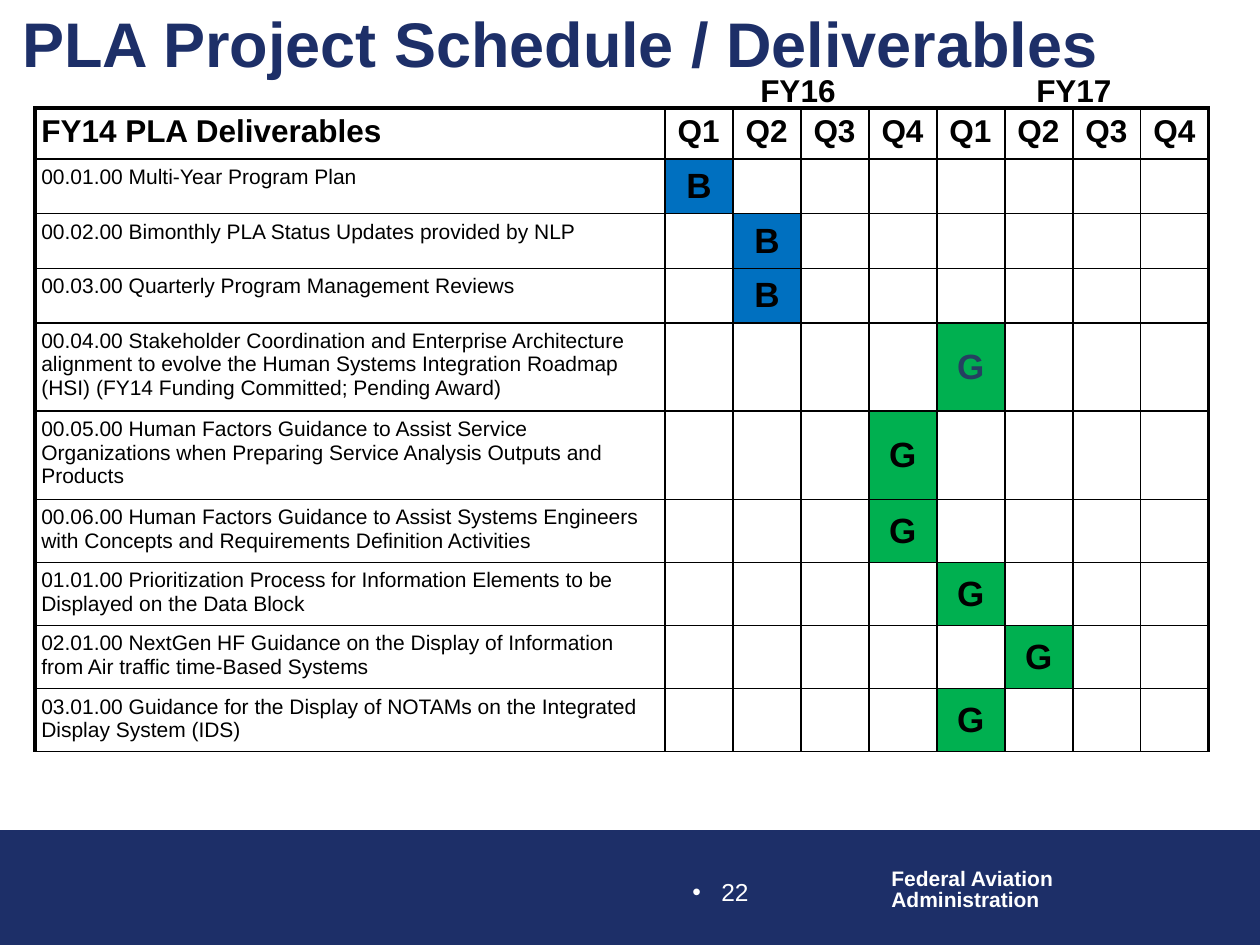
import pptx
import pptx.util
import pptx.dml.color
import pptx.enum.shapes
import pptx.enum.text
import pptx.oxml.ns
import lxml.etree

# Content
TITLE = "PLA Project Schedule / Deliverables"
YEARS = [("FY16", 728), ("FY17", 1004)]
AGENCY = ["Federal Aviation", "Administration"]
PAGE_NUMBER = "22"
HEADER = ["FY14 PLA Deliverables"] + ["Q1", "Q2", "Q3", "Q4"] * 2
# Deliverable, quarter column, status, row height in px
DELIVERABLES = [
    ("00.01.00 Multi-Year Program Plan", 1, "B", 51),
    ("00.02.00 Bimonthly PLA Status Updates provided by NLP", 2, "B", 52),
    ("00.03.00 Quarterly Program Management Reviews", 2, "B", 52),
    ("00.04.00 Stakeholder Coordination and Enterprise Architecture alignment to evolve "
     "the Human Systems Integration Roadmap (HSI) (FY14 Funding Committed; Pending Award)",
     5, "G", 83),
    ("00.05.00 Human Factors Guidance to Assist Service Organizations when Preparing "
     "Service Analysis Outputs and Products", 4, "G", 83),
    ("00.06.00 Human Factors Guidance to Assist Systems Engineers with Concepts and "
     "Requirements Definition Activities", 4, "G", 60),
    ("01.01.00 Prioritization Process for Information Elements to be Displayed on the "
     "Data Block", 5, "G", 59),
    ("02.01.00 NextGen HF Guidance on the Display of Information from Air traffic "
     "time-Based Systems", 6, "G", 60),
    ("03.01.00 Guidance for the Display of NOTAMs on the Integrated Display System (IDS)",
     5, "G", 60),
]
MUTED_ROW = 4
COLORS = {"navy": "1D2F68", "white": "FFFFFF", "black": "000000",
          "muted": "254061", "B": "0070C0", "G": "00B050"}
FONT = "Arial"
HEADER_HEIGHT, NAME_WIDTH, QUARTER_WIDTH = 51, 630, 68
THIN, THICK = 1, 2.25
ALIGN = pptx.enum.text.PP_ALIGN
ANCHOR = pptx.enum.text.MSO_ANCHOR


def px(value):
    return pptx.util.Emu(value * 914400 // 126)


def color(name):
    return pptx.dml.color.RGBColor.from_string(COLORS[name])


def write(paragraph, text, size, bold=False, ink="black", align=ALIGN.LEFT):
    paragraph.alignment = align
    run = paragraph.add_run()
    run.text = text
    run.font.name = FONT
    run.font.size = pptx.util.Pt(size)
    run.font.bold = bold
    run.font.color.rgb = color(ink)


def add_box(slide, left, top, width, height, anchor=ANCHOR.TOP):
    frame = slide.shapes.add_textbox(px(left), px(top), px(width), px(height)).text_frame
    frame.word_wrap = True
    frame.vertical_anchor = anchor
    return frame


def add_border(cell, side, width):
    properties = cell._tc.get_or_add_tcPr()
    line = lxml.etree.SubElement(properties, pptx.oxml.ns.qn("a:ln" + side),
                                 w=str(pptx.util.Pt(width)))
    fill = lxml.etree.SubElement(line, pptx.oxml.ns.qn("a:solidFill"))
    lxml.etree.SubElement(fill, pptx.oxml.ns.qn("a:srgbClr"), val=COLORS["black"])


def add_bullet(paragraph, indent):
    properties = paragraph._p.get_or_add_pPr()
    properties.set("marL", str(px(indent)))
    properties.set("indent", str(-px(indent)))
    lxml.etree.SubElement(properties, pptx.oxml.ns.qn("a:buFont"), typeface=FONT)
    lxml.etree.SubElement(properties, pptx.oxml.ns.qn("a:buChar"), char="•")


def add_footer(slide):
    band = slide.shapes.add_shape(pptx.enum.shapes.MSO_SHAPE.RECTANGLE,
                                  px(0), px(831), px(1260), px(113))
    band.shadow.inherit = False
    band.fill.solid()
    band.fill.fore_color.rgb = color("navy")
    band.line.color.rgb = color("navy")
    band.line.width = pptx.util.Pt(0.75)

    agency = add_box(slide, 879, 863, 189, 55)
    for index, text in enumerate(AGENCY):
        paragraph = agency.add_paragraph() if index else agency.paragraphs[0]
        paragraph.line_spacing = 0.85
        write(paragraph, text, 12, True, "white")

    number = add_box(slide, 499, 871, 262, 63).paragraphs[0]
    add_bullet(number, 29)
    write(number, PAGE_NUMBER, 14, False, "white", ALIGN.RIGHT)


def add_schedule(slide):
    heights = [HEADER_HEIGHT] + [item[3] for item in DELIVERABLES]
    widths = [NAME_WIDTH] + [QUARTER_WIDTH] * (len(HEADER) - 1)
    table = slide.shapes.add_table(len(heights), len(widths), px(35), px(108),
                                   px(sum(widths)), px(sum(heights))).table
    table.first_row = table.horz_banding = False
    for column, width in zip(table.columns, widths):
        column.width = px(width)
    for row, height in zip(table.rows, heights):
        row.height = px(height)

    # Borders, fills and margins
    last = len(widths) - 1
    for r in range(len(heights)):
        for c in range(len(widths)):
            cell = table.cell(r, c)
            add_border(cell, "L", THICK if c == 0 else THIN)
            add_border(cell, "R", THICK if c == last else THIN)
            add_border(cell, "T", THICK if r == 0 else THIN)
            add_border(cell, "B", THIN)
            cell.fill.solid()
            cell.fill.fore_color.rgb = color("white")
            if c == 0:
                cell.margin_left = cell.margin_right = pptx.util.Inches(0.05)

    # Header, deliverables and status marks
    for c, text in enumerate(HEADER):
        write(table.cell(0, c).text_frame.paragraphs[0], text, 18, True)
    for r, (name, quarter, status, _) in enumerate(DELIVERABLES, 1):
        write(table.cell(r, 0).text_frame.paragraphs[0], name, 12)
        mark = table.cell(r, quarter)
        mark.fill.fore_color.rgb = color(status)
        mark.vertical_anchor = ANCHOR.MIDDLE
        ink = "muted" if r == MUTED_ROW else "black"
        write(mark.text_frame.paragraphs[0], status, 20, True, ink, ALIGN.CENTER)


def main():
    presentation = pptx.Presentation()
    presentation.slide_width, presentation.slide_height = px(1260), px(945)
    slide = presentation.slides.add_slide(presentation.slide_layouts[6])
    add_footer(slide)
    title = add_box(slide, 10, 0, 1313, 84, ANCHOR.MIDDLE)
    write(title.paragraphs[0], TITLE, 36, True, "navy")
    add_schedule(slide)
    for year, left in YEARS:
        label = add_box(slide, left, 65, 140, 50)
        write(label.paragraphs[0], year, 18, True, align=ALIGN.CENTER)
    presentation.save("out.pptx")


if __name__ == "__main__":
    main()
